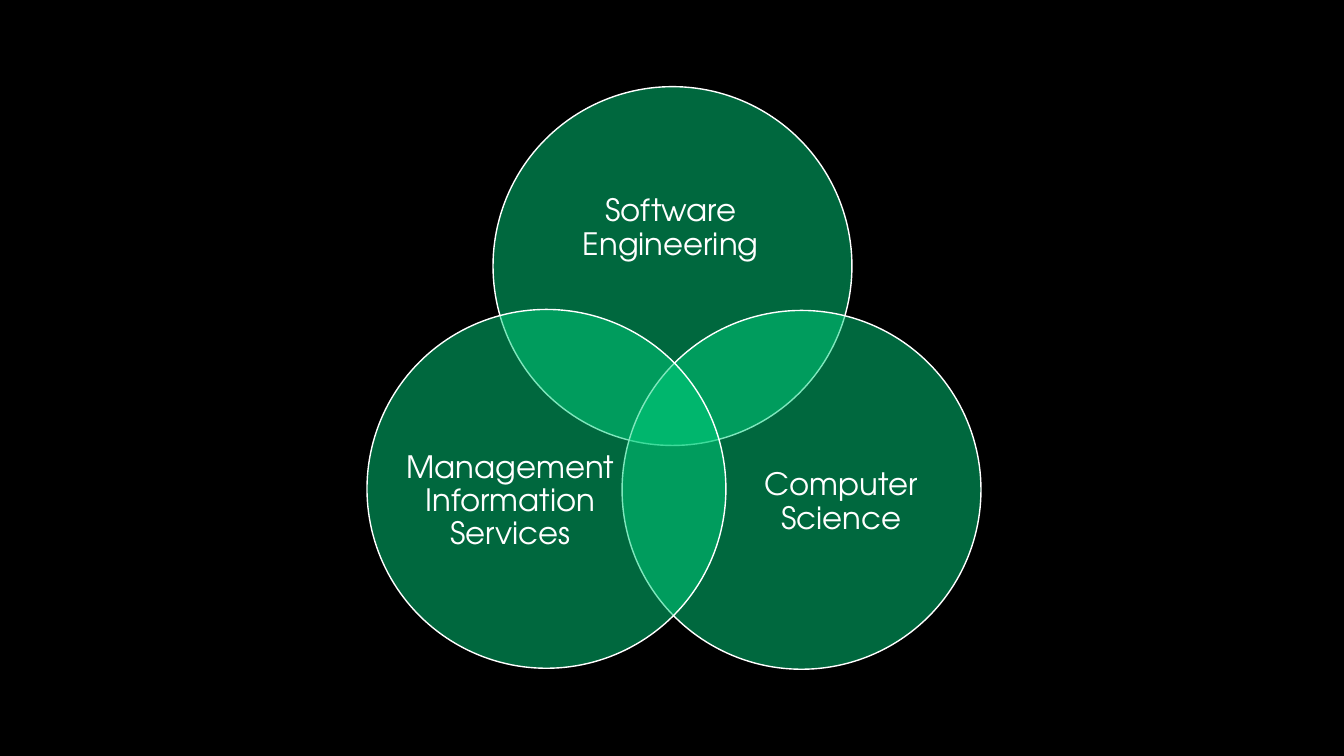
"""Venn diagram of three overlapping computing disciplines."""
from lxml.etree import SubElement
from pptx import Presentation
from pptx.dml.color import RGBColor
from pptx.enum.shapes import MSO_SHAPE as Shape
from pptx.enum.text import MSO_ANCHOR as Anchor, PP_ALIGN as Align
from pptx.oxml.ns import qn
from pptx.util import Inches, Pt

COLORS = {"background": "000000", "circle": "01D17D", "light": "FFFFFF"}
DIAMETER = 3.56
LABEL_FORMAT = {"name": "TeX Gyre Adventor", "size": Pt(22)}
FRAME_FORMAT = {
    "word_wrap": True, "vertical_anchor": Anchor.MIDDLE,
    "margin_left": 0, "margin_right": 0, "margin_top": 0, "margin_bottom": 0,
}
PARAGRAPH_FORMAT = {"alignment": Align.CENTER, "line_spacing": 0.9}

# Each row: label, circle corner in inches, label box in shares of the diameter.
DISCIPLINES = [
    ("Software Engineering", (4.89, 0.86), (0.13, 0.17, 0.73, 0.45)),
    ("Computer Science", (6.17, 3.08), (0.31, 0.26, 0.6, 0.55)),
    ("Management Information Services", (3.64, 3.07), (0.1, 0.26, 0.6, 0.55)),
]


def color(name):
    return RGBColor.from_string(COLORS[name])


presentation = Presentation()
presentation.slide_width, presentation.slide_height = Inches(13.33), Inches(7.5)
slide = presentation.slides.add_slide(presentation.slide_layouts[6])
slide.background.fill.solid()
slide.background.fill.fore_color.rgb = color("background")

for label, (left, top), (label_left, label_top, width, height) in DISCIPLINES:
    circle = slide.shapes.add_shape(
        Shape.OVAL, Inches(left), Inches(top), Inches(DIAMETER), Inches(DIAMETER))
    circle.shadow.inherit = False
    circle.fill.solid()
    circle.fill.fore_color.rgb = color("circle")
    fill_color = circle.fill._xPr.find(qn("a:solidFill"))[0]
    SubElement(fill_color, qn("a:alpha"), val="50000")
    circle.line.color.rgb = color("light")
    circle.line.width = Pt(1)

    text_box = slide.shapes.add_textbox(
        Inches(left + label_left * DIAMETER), Inches(top + label_top * DIAMETER),
        Inches(width * DIAMETER), Inches(height * DIAMETER))
    frame = text_box.text_frame
    paragraph = frame.paragraphs[0]
    paragraph.text = label
    font = paragraph.runs[0].font
    font.color.rgb = color("light")
    for target, values in ((frame, FRAME_FORMAT), (paragraph, PARAGRAPH_FORMAT),
                           (font, LABEL_FORMAT)):
        for attribute, value in values.items():
            setattr(target, attribute, value)

presentation.save("out.pptx")
